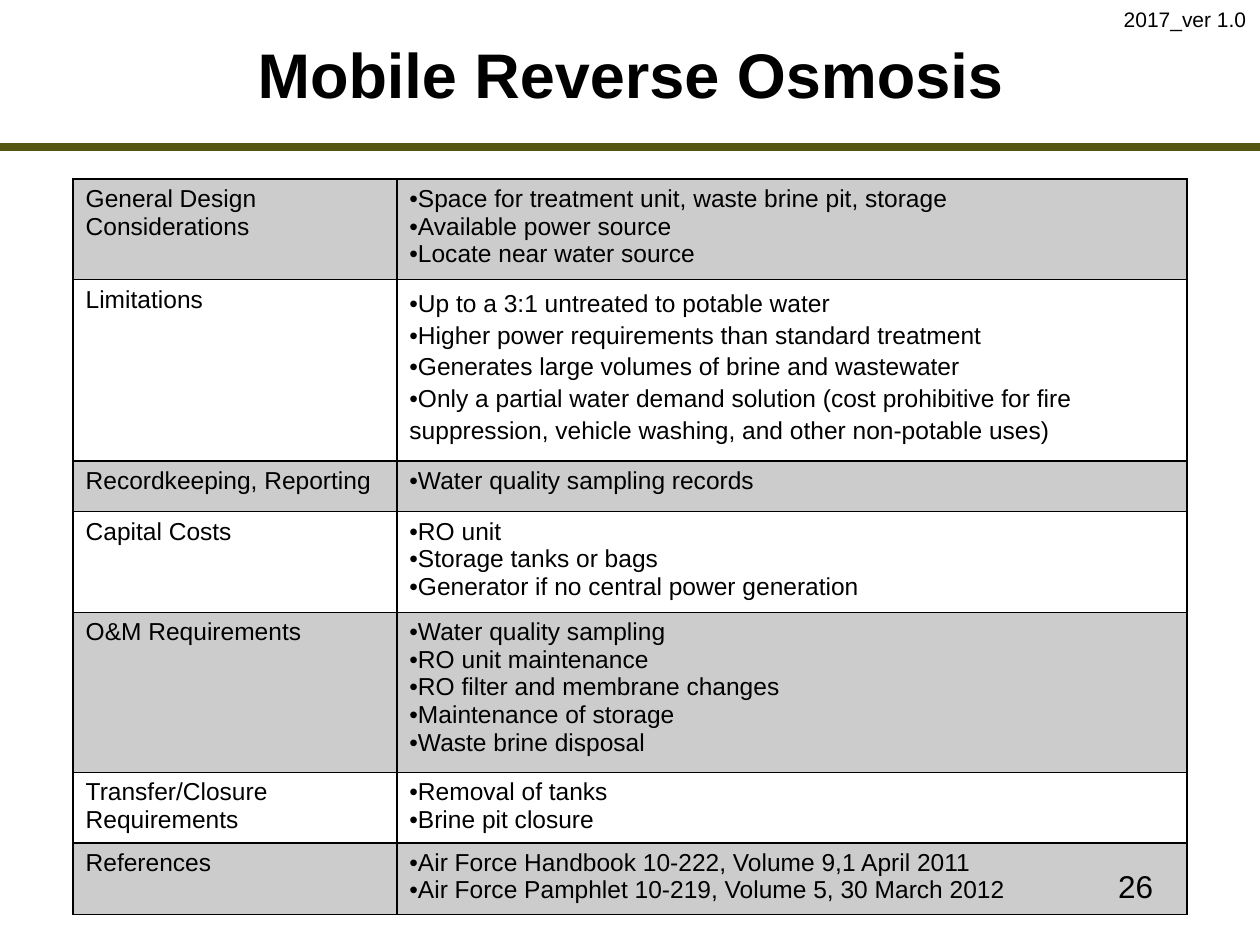
from dataclasses import dataclass

import pptx
import pptx.dml.color
import pptx.enum.shapes
import pptx.enum.text
import pptx.oxml
import pptx.oxml.ns
import pptx.util
from pptx.util import Inches

COLORS = {"text": "000000", "rule": "545612", "border": "000000", "band": "000000"}
BAND_OPACITY = 20000
FONT = "Arial"
NS = pptx.oxml.ns.nsdecls("a")
ALIGN = pptx.enum.text.PP_ALIGN


@dataclass
class Topic:
    name: str
    height: float
    points: list[str]
    line_spacing: float | None = None


TOPICS = [
    Topic("General Design Considerations", 0.8, [
        "Space for treatment unit, waste brine pit, storage",
        "Available power source",
        "Locate near water source"]),
    Topic("Limitations", 1.44, [
        "Up to a 3:1 untreated to potable water",
        "Higher power requirements than standard treatment",
        "Generates large volumes of brine and wastewater",
        "Only a partial water demand solution (cost prohibitive for fire "
        "suppression, vehicle washing, and other non-potable uses)"], 1.15),
    Topic("Recordkeeping, Reporting", 0.4, ["Water quality sampling records"]),
    Topic("Capital Costs", 0.8, [
        "RO unit",
        "Storage tanks or bags",
        "Generator if no central power generation"]),
    Topic("O&M Requirements", 1.27, [
        "Water quality sampling",
        "RO unit maintenance",
        "RO filter and membrane changes",
        "Maintenance of storage",
        "Waste brine disposal"]),
    Topic("Transfer/Closure Requirements", 0.56, [
        "Removal of tanks",
        "Brine pit closure"]),
    Topic("References", 0.57, [
        "Air Force Handbook 10-222, Volume 9,1 April 2011",
        "Air Force Pamphlet 10-219, Volume 5, 30 March 2012"]),
]


def rgb(name: str) -> pptx.dml.color.RGBColor:
    return pptx.dml.color.RGBColor.from_string(COLORS[name])


def write(p, text: str, size: float, bold: bool = False) -> None:
    r = p.add_run()
    r.text = text
    values = {"name": FONT, "size": pptx.util.Pt(size), "bold": bold}
    for key, value in values.items():
        setattr(r.font, key, value)
    r.font.color.rgb = rgb("text")


def add_bullet(p) -> None:
    pPr = p._p.get_or_add_pPr()
    pPr.set("marL", "0")
    pPr.set("indent", "0")
    for tag in (f'buFont {NS} typeface="{FONT}"', f'buChar {NS} char="•"'):
        pPr.append(pptx.oxml.parse_xml(f"<a:{tag}/>"))


def style_cell(cell, banded: bool) -> None:
    tcPr = cell._tc.get_or_add_tcPr()
    for side in ("lnL", "lnR", "lnT", "lnB"):
        tcPr.append(pptx.oxml.parse_xml(
            f'<a:{side} {NS} w="12700"><a:solidFill>'
            f'<a:srgbClr val="{COLORS["border"]}"/></a:solidFill></a:{side}>'))
    if not banded:
        cell.fill.background()
        return
    cell.fill.solid()
    cell.fill.fore_color.rgb = rgb("band")
    color = tcPr.find(pptx.oxml.ns.qn("a:solidFill"))[0]
    color.append(pptx.oxml.parse_xml(f'<a:alpha {NS} val="{BAND_OPACITY}"/>'))


def add_topic_table(s, topics: list[Topic]) -> None:
    widths = (2.57, 6.27)
    height = sum(topic.height for topic in topics)
    table = s.shapes.add_table(len(topics), 2, Inches(0.58), Inches(1.42),
                               Inches(sum(widths)), Inches(height)).table
    table.first_row = table.horz_banding = False
    for column, width in zip(table.columns, widths):
        column.width = Inches(width)
    for i, topic in enumerate(topics):
        table.rows[i].height = Inches(topic.height)
        name, details = table.cell(i, 0), table.cell(i, 1)
        for cell in (name, details):
            style_cell(cell, banded=i % 2 == 0)
        write(name.text_frame.paragraphs[0], topic.name, 14)
        tf = details.text_frame
        for j, point in enumerate(topic.points):
            p = tf.add_paragraph() if j else tf.paragraphs[0]
            add_bullet(p)
            if topic.line_spacing:
                p.line_spacing = topic.line_spacing
            write(p, point, 14)


def add_label(s, text: str, box: tuple[float, ...], size: float,
              align: ALIGN, wrap: bool) -> None:
    tf = s.shapes.add_textbox(*map(Inches, box)).text_frame
    tf.word_wrap = wrap
    p = tf.paragraphs[0]
    p.alignment = align
    write(p, text, size)


def add_title(s, text: str) -> None:
    title = s.shapes.title
    place = {"left": 1.17, "top": 0.17, "width": 7.67, "height": 0.83}
    for key, value in place.items():
        setattr(title, key, Inches(value))
    tf = title.text_frame
    tf.vertical_anchor = pptx.enum.text.MSO_ANCHOR.MIDDLE
    tf.paragraphs[0].alignment = ALIGN.CENTER
    write(tf.paragraphs[0], text, 36, bold=True)


def add_rule(s, y: float) -> None:
    line = s.shapes.add_connector(pptx.enum.shapes.MSO_CONNECTOR.STRAIGHT,
                                  0, Inches(y), Inches(10), Inches(y))
    line.line.color.rgb = rgb("rule")
    line.line.width = pptx.util.Pt(4.5)
    line._element.spPr.append(pptx.oxml.parse_xml(f"<a:effectLst {NS}/>"))


def main() -> None:
    prs = pptx.Presentation()
    prs.slide_width, prs.slide_height = Inches(10), Inches(7.5)
    s = prs.slides.add_slide(prs.slide_layouts[5])
    add_rule(s, 1.17)
    add_topic_table(s, TOPICS)
    add_title(s, "Mobile Reverse Osmosis")
    add_label(s, "26", (7.17, 6.83, 2.08, 0.5), 18, ALIGN.RIGHT, wrap=True)
    add_label(s, "2017_ver 1.0", (8.82, 0, 1.18, 0.3), 12, ALIGN.LEFT, wrap=False)
    prs.save("out.pptx")


if __name__ == "__main__":
    main()
